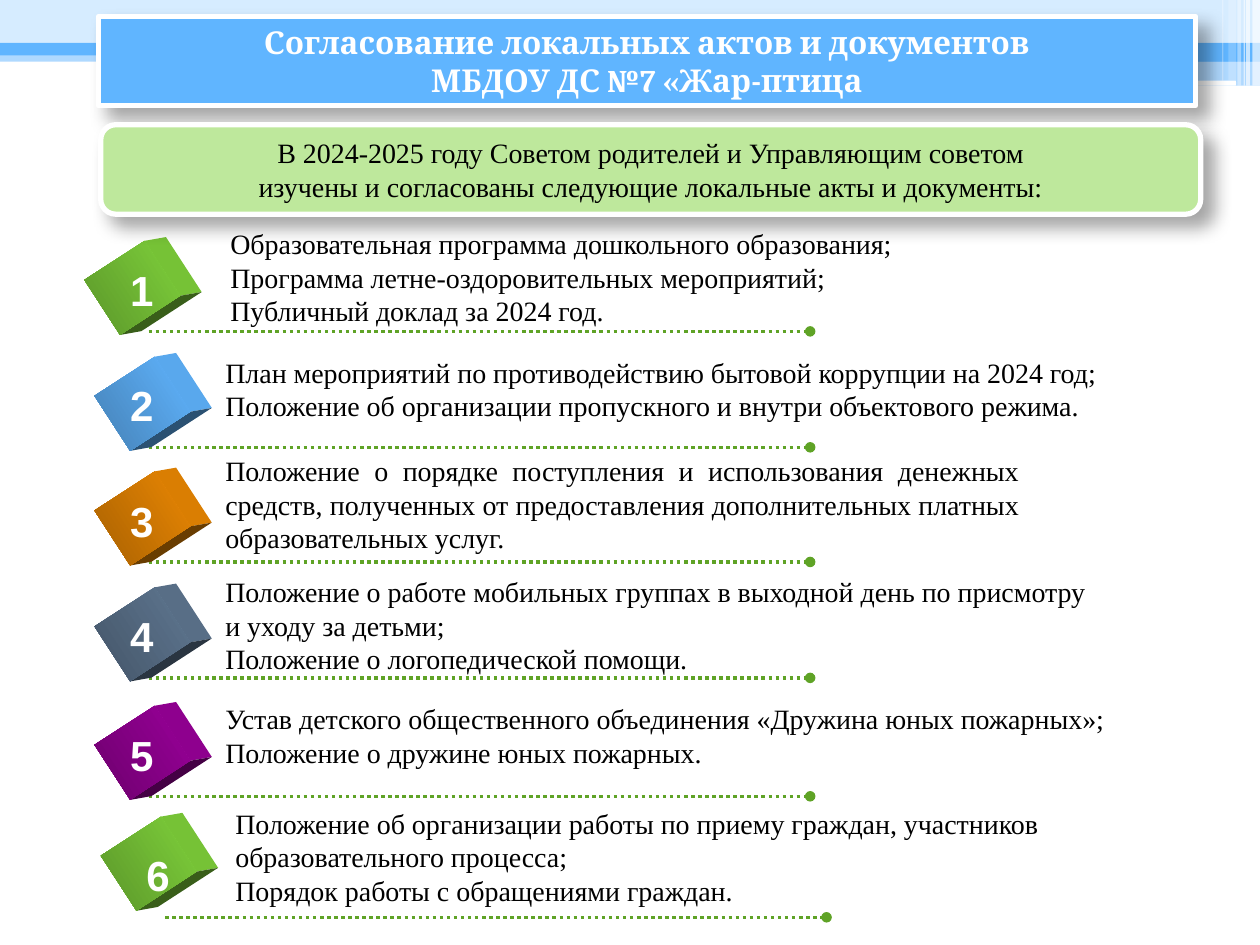
from math import cos, radians, sin

from lxml.etree import SubElement
from pptx import Presentation
from pptx.dml.color import RGBColor
from pptx.enum.dml import MSO_LINE
from pptx.enum.shapes import MSO_CONNECTOR, MSO_SHAPE as Preset
from pptx.enum.text import MSO_ANCHOR as Anchor, MSO_AUTO_SIZE as AutoSize, PP_ALIGN as Align
from pptx.oxml.ns import qn
from pptx.util import Inches, Pt

SKY, WHITE, BLACK, GREEN = "60B5FF", "FFFFFF", "000000", "5FA326"

BANDS = [
    (0, 0.4, 10, 0.09, SKY, 50),
    (0, 0, 10, 0.34, "D6ECFF", 100),
    (0, 0.34, 10, 0.1, SKY, 100),
    (5.92, 0.39, 4.08, 0.1, SKY, 100),
    (5.92, 0.48, 4.08, 0.2, SKY, 50),
]
STRIPES = [
    (9.94, 0.06, 0.68, 65), (9.89, 0.03, 0.68, 65), (9.87, 0.01, 0.68, 60),
    (9.82, 0.03, 0.68, 40), (9.75, 0.06, 0.64, 20), (9.7, 0.01, 0.64, 30),
]
TITLE = ["Согласование локальных актов и документов", "МБДОУ ДС №7 «Жар-птица"]
INTRO = [
    "В 2024-2025 году Советом родителей и Управляющим советом",
    "изучены и согласованы следующие локальные акты и документы:",
]
LEAF, BLUE, ORANGE = ("7FD13B", "5B962A"), (SKY, "4581B6"), ("EB8803", "A86102")
SLATE, PURPLE = ("5F7791", "445568"), ("990099", "6D006D")

ITEMS = [
    (LEAF, (0.79, 2), (0.93, 2.05), (1.18, 2.63), (1.73, 1.75, 6.58, 0.91), Align.LEFT, [
        "Образовательная программа дошкольного образования;",
        "Программа летне-оздоровительных мероприятий;",
        "Публичный доклад за 2024 год."]),
    (BLUE, (0.87, 2.92), (0.93, 2.96), (1.18, 3.55), (1.69, 2.77, 7.17, 0.64), Align.JUSTIFY, [
        "План мероприятий по противодействию бытовой коррупции на 2024 год;",
        "Положение об организации пропускного и внутри объектового режима."]),
    (ORANGE, (0.87, 3.83), (0.93, 3.88), (1.18, 4.46), (1.69, 3.55, 6.5, 0.91), Align.JUSTIFY, [
        "Положение о порядке поступления и использования денежных средств, "
        "полученных от предоставления дополнительных платных образовательных услуг."]),
    (SLATE, (0.87, 4.75), (0.93, 4.8), (1.18, 5.38), (1.69, 4.51, 7.2, 0.91), Align.LEFT, [
        "Положение о работе мобильных группах в выходной день по присмотру и уходу за детьми;",
        "Положение о логопедической помощи."]),
    (PURPLE, (0.87, 5.69), (0.93, 5.74), (1.18, 6.32), (1.69, 5.52, 7.28, 0.64), Align.LEFT, [
        "Устав детского общественного объединения «Дружина юных пожарных»;",
        "Положение о дружине юных пожарных."]),
    (LEAF, (0.92, 6.57), (1.06, 6.69), (1.31, 7.28), (1.77, 6.35, 7.06, 0.94), Align.LEFT, [
        "Положение об организации работы по приему граждан, участников образовательного процесса;",
        "Порядок работы с обращениями граждан."]),
]


def color(value):
    return RGBColor.from_string(value)


def darker(value, share):
    return "".join(f"{int(int(value[i:i + 2], 16) * share):02X}" for i in (0, 2, 4))


class Painter:
    """Holds the text style and the current slide, and draws its elements."""

    def __init__(self, page, font="Times New Roman", size=16):
        self.page, self.shapes = page, page.shapes
        self.font, self.size = font, size

    def set_text(self, box, lines, align, tint=BLACK, font=None, size=None, bold=False,
                 anchor=Anchor.TOP, wrap=True):
        frame = box.text_frame
        frame.text = "\n".join(lines)
        frame.word_wrap = wrap
        frame.auto_size = AutoSize.NONE
        frame.vertical_anchor = anchor
        for para in frame.paragraphs:
            para.alignment = align
            for span in para.runs:
                span.font.name = font or self.font
                span.font.size = Pt(size or self.size)
                span.font.bold = bold
                span.font.color.rgb = color(tint)

    def text(self, bounds, lines, align, **style):
        box = self.shapes.add_textbox(*map(Inches, bounds))
        self.set_text(box, lines, align, **style)

    def fill(self, shape, tint, opacity=100):
        shape.shadow.inherit = False
        shape.line.fill.background()
        shape.fill.solid()
        shape.fill.fore_color.rgb = color(tint)
        if opacity < 100:
            tone = shape.element.spPr.find(qn("a:solidFill"))[0]
            SubElement(tone, qn("a:alpha"), val=str(opacity * 1000))

    def block(self, bounds, tint, opacity=100, preset=Preset.RECTANGLE):
        shape = self.shapes.add_shape(preset, *map(Inches, bounds))
        self.fill(shape, tint, opacity)
        return shape

    def frame(self, shape, tint):
        self.fill(shape, tint)
        shape.line.color.rgb = color(WHITE)
        shape.line.width = Pt(3)
        effects = shape.element.spPr.find(qn("a:effectLst"))
        shadow = SubElement(effects, qn("a:outerShdw"), blurRad=str(int(Pt(10.2))),
                            dist=str(int(Pt(8))), dir="2700000", algn="tl", rotWithShape="0")
        tone = SubElement(shadow, qn("a:srgbClr"), val=BLACK)
        SubElement(tone, qn("a:alpha"), val="35000")

    def title(self, bounds, lines):
        box = self.shapes.title
        box.left, box.top, box.width, box.height = map(Inches, bounds)
        self.frame(box, SKY)
        self.set_text(box, lines, Align.CENTER, WHITE, "Cambria", 18, True, Anchor.MIDDLE)
        box.element.getparent().append(box.element)

    def intro(self, bounds, lines):
        box = self.block(bounds, WHITE, preset=Preset.ROUNDED_RECTANGLE)
        self.frame(box, "BEE89C")
        self.set_text(box, lines, Align.CENTER, anchor=Anchor.MIDDLE)

    def face(self, points, tint):
        builder = self.shapes.build_freeform(*map(Inches, points[0]), scale=1.0)
        builder.add_line_segments([tuple(map(Inches, point)) for point in points[1:]])
        self.fill(builder.convert_to_shape(), tint)

    def cube(self, left, top, tints, width=0.52, height=0.57, turn=57, depth=(0.17, -0.03)):
        angle = radians(turn)
        corners = []
        for x, y in ((-1, -1), (1, -1), (1, 1)):
            x, y = x * width / 2, y * height / 2
            corners.append((left + width / 2 + x * cos(angle) - y * sin(angle),
                            top + height / 2 + x * sin(angle) + y * cos(angle)))
        back = [(x + depth[0], y + depth[1]) for x, y in corners]
        for i, share in enumerate((0.93, 0.45)):
            self.face([corners[i], back[i], back[i + 1], corners[i + 1]],
                      darker(tints[0], share))
        front = self.block((left, top, width, height), tints[0])
        front.rotation = turn
        front.fill.gradient()
        front.fill.gradient_angle = 270
        for stop, tint, place in zip(front.fill.gradient_stops, tints, (0, 1)):
            stop.color.rgb = color(tint)
            stop.position = place

    def dots(self, left, top, length=5.25):
        ends = map(Inches, (left, top, left + length, top))
        line = self.shapes.add_connector(MSO_CONNECTOR.STRAIGHT, *ends)
        line.line.color.rgb = color(GREEN)
        line.line.width = Pt(2)
        line.line.dash_style = MSO_LINE.ROUND_DOT
        SubElement(line.element.spPr.find(qn("a:ln")), qn("a:tailEnd"), type="oval")
        SubElement(line.element.spPr, qn("a:effectLst"))


def main():
    deck = Presentation()
    deck.slide_width, deck.slide_height = Inches(10), Inches(7.5)
    painter = Painter(deck.slides.add_slide(deck.slide_layouts[5]))
    for *bounds, tint, opacity in BANDS:
        painter.block(bounds, tint, opacity)
    painter.block((8.06, 0.64, 1.75, 0.04), WHITE, preset=Preset.ROUNDED_RECTANGLE)
    for left, width, height, opacity in STRIPES:
        painter.block((left, 0, width, height), WHITE, opacity)
    for number, (tints, cube, label, line, bounds, align, lines) in enumerate(ITEMS, 1):
        painter.dots(*line)
        painter.cube(*cube, tints)
        painter.text((*label, 0.39, 0.5), [str(number)], Align.CENTER, tint=WHITE,
                     font="Arial", size=24, bold=True, wrap=False)
        painter.text(bounds, lines, align)
    painter.title((0.78, 0.13, 8.71, 0.71), TITLE)
    painter.intro((0.8, 0.99, 8.73, 0.71), INTRO)
    deck.save("out.pptx")


if __name__ == "__main__":
    main()
